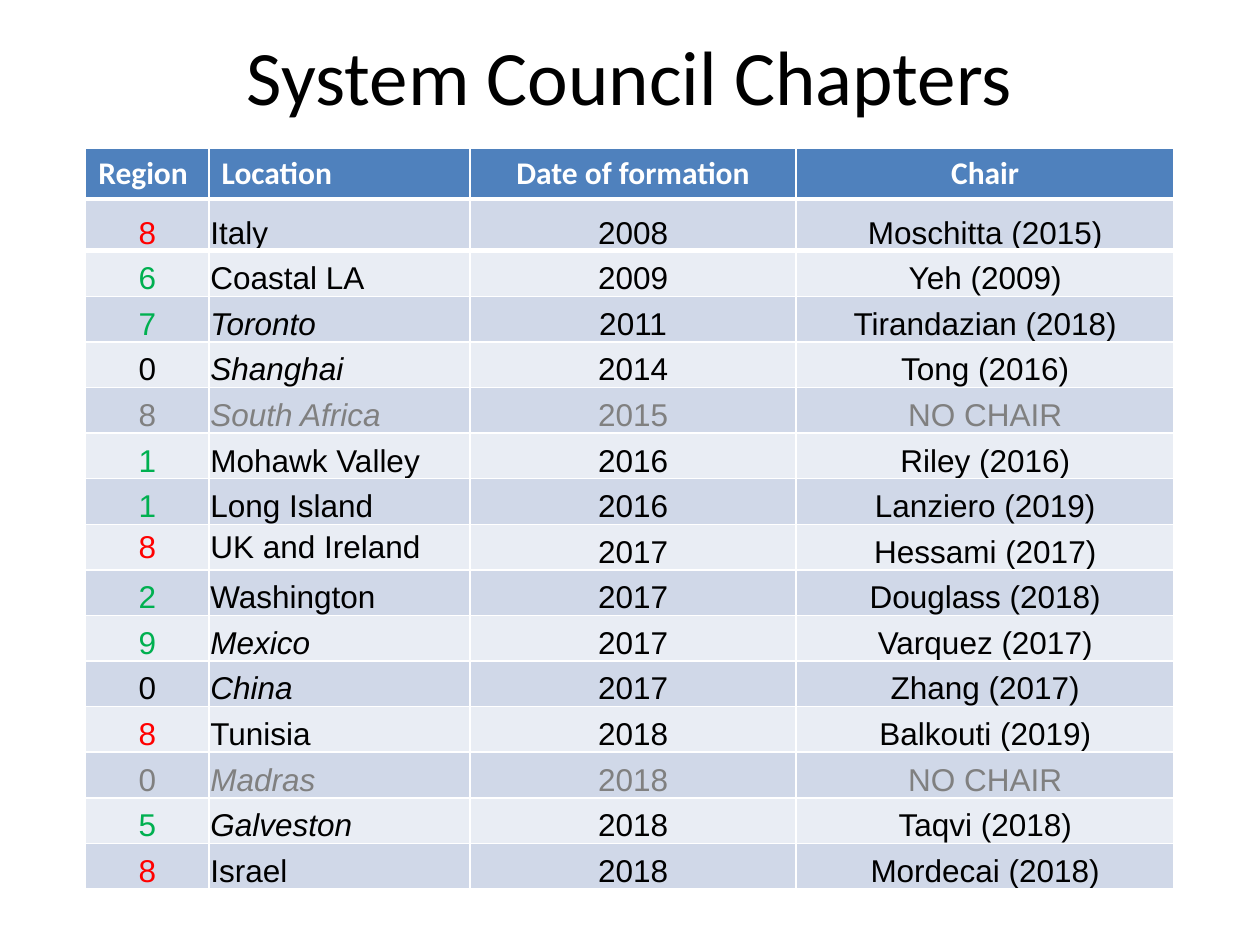
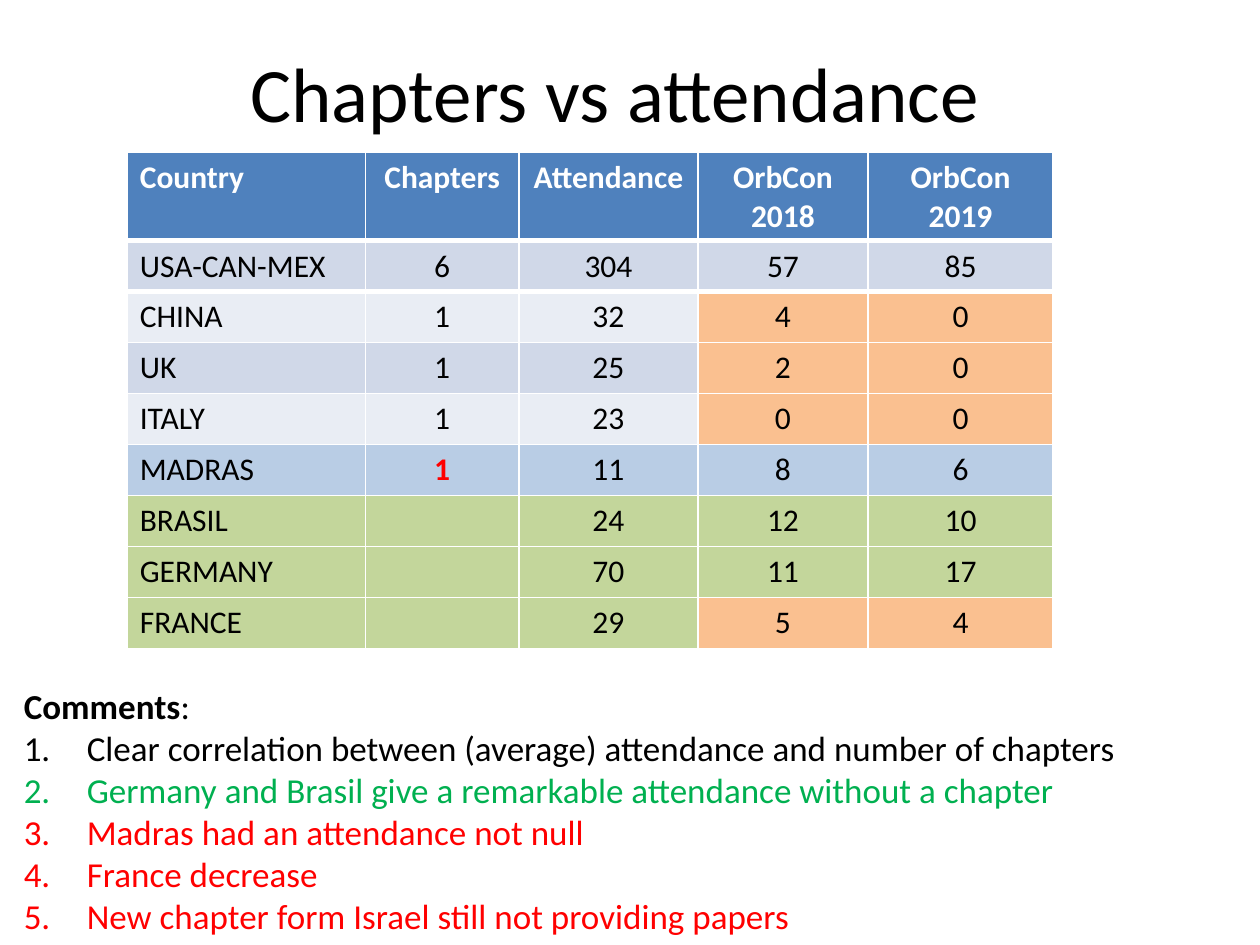
from dataclasses import dataclass
from lxml.etree import SubElement
from pptx import Presentation
from pptx.dml.color import RGBColor
from pptx.enum.text import MSO_ANCHOR, PP_ALIGN
from pptx.oxml.ns import qn
from pptx.util import Inches, Pt


@dataclass(frozen=True)
class Theme:
    """Colours, fonts and type sizes shared by the slides."""
    black: str = "000000"
    white: str = "FFFFFF"
    red: str = "FF0000"
    green: str = "00B050"
    grey: str = "808080"
    head: str = "4F81BD"
    bands: tuple = ("D0D8E8", "E9EDF4")
    blue: str = "B9CDE5"
    lime: str = "C3D69B"
    peach: str = "FAC090"
    main: str = "Calibri"
    data: str = "Arial"
    title: int = 44
    note: int = 20
    cell: int = 18
    rule: int = 3


THEME = Theme()

CHAPTERS = [
    ("8", "Italy", "2008", "Moschitta (2015)"),
    ("6", "Coastal LA", "2009", "Yeh (2009)"),
    ("7", "Toronto", "2011", "Tirandazian (2018)"),
    ("0", "Shanghai", "2014", "Tong (2016)"),
    ("8", "South Africa", "2015", "NO CHAIR"),
    ("1", "Mohawk Valley", "2016", "Riley (2016)"),
    ("1", "Long Island", "2016", "Lanziero (2019)"),
    ("8", "UK and Ireland", "2017", "Hessami (2017)"),
    ("2", "Washington", "2017", "Douglass (2018)"),
    ("9", "Mexico", "2017", "Varquez (2017)"),
    ("0", "China", "2017", "Zhang (2017)"),
    ("8", "Tunisia", "2018", "Balkouti (2019)"),
    ("0", "Madras", "2018", "NO CHAIR"),
    ("5", "Galveston", "2018", "Taqvi (2018)"),
    ("8", "Israel", "2018", "Mordecai (2018)"),
]
ITALIC = {"Toronto", "Shanghai", "South Africa", "Mexico", "China", "Madras", "Galveston"}

TURNOUT = [
    ("USA-CAN-MEX", "6", "304", "57", "85"),
    ("CHINA", "1", "32", "4", "0"),
    ("UK", "1", "25", "2", "0"),
    ("ITALY", "1", "23", "0", "0"),
    ("MADRAS", "1", "11", "8", "6"),
    ("BRASIL", "", "24", "12", "10"),
    ("GERMANY", "", "70", "11", "17"),
    ("FRANCE", "", "29", "5", "4"),
]
TINTS = {"MADRAS": THEME.blue, "BRASIL": THEME.lime, "GERMANY": THEME.lime, "FRANCE": THEME.lime}
WEAK = {"CHINA", "UK", "ITALY", "FRANCE"}

COMMENTS = [
    ("Clear correlation between (average) attendance and number of chapters", THEME.black),
    ("Germany and Brasil give a remarkable attendance without a chapter", THEME.green),
    ("Madras had an attendance not null", THEME.red),
    ("France decrease", THEME.red),
    ("New chapter form Israel still not providing papers", THEME.red),
]


def style(font, size, color=THEME.black, face=THEME.main, bold=False, italic=False):
    """Set every trait of a font."""
    font.size, font.name = Pt(size), face
    font.bold, font.italic = bold, italic
    font.color.rgb = RGBColor.from_string(color)


def add_text(slide, box):
    """Add a wrapping text box and return its frame."""
    frame = slide.shapes.add_textbox(*map(Inches, box)).text_frame
    frame.word_wrap = True
    return frame


def add_title(slide, box, text):
    """Add a centred slide title."""
    frame = add_text(slide, box)
    frame.vertical_anchor = MSO_ANCHOR.MIDDLE
    para = frame.paragraphs[0]
    para.text, para.alignment = text, PP_ALIGN.CENTER
    style(para.font, THEME.title)


def fill_cell(cell, text, fill, center=True, **look):
    """Write one table cell on a solid fill."""
    cell.fill.solid()
    cell.fill.fore_color.rgb = RGBColor.from_string(fill)
    cell.text = text
    for para in cell.text_frame.paragraphs:
        para.alignment = PP_ALIGN.CENTER if center else PP_ALIGN.LEFT
        style(para.font, THEME.cell, **look)


def add_rule(cell, side):
    """Draw a heavy white border on one side of a cell."""
    props = cell._tc.get_or_add_tcPr()
    line = props.makeelement(qn(f"a:{side}"), {"w": str(Pt(THEME.rule))})
    SubElement(SubElement(line, qn("a:solidFill")), qn("a:srgbClr"), val=THEME.white)
    props.insert(0, line)


def add_grid(slide, spot, widths, heights, heads, left):
    """Add a table with its header row; columns in left align left."""
    box = (*spot, sum(widths), sum(heights))
    grid = slide.shapes.add_table(len(heights), len(widths), *map(Inches, box)).table
    for col, width in zip(grid.columns, widths):
        col.width = Inches(width)
    for row, height in zip(grid.rows, heights):
        row.height = Inches(height)
    for col, text in enumerate(heads):
        fill_cell(grid.cell(0, col), text, THEME.head, col not in left,
                  color=THEME.white, bold=True)
        add_rule(grid.cell(0, col), "lnB")
        add_rule(grid.cell(1, col), "lnT")
    return grid


def add_roster(slide, spot):
    """Add the table of chapters."""
    hues = {"8": THEME.red, "0": THEME.black}
    rest = len(CHAPTERS) - 1
    heights = [0.39, 0.41] + [5.07 / rest] * rest
    heads = ("Region", "Location", "Date of formation", "Chair")
    grid = add_grid(slide, spot, (0.98, 2.07, 2.59, 3), heights, heads, (0, 1))
    for row, entry in enumerate(CHAPTERS, 1):
        region, place, _, chair = entry
        ink = THEME.grey if chair == "NO CHAIR" else THEME.black
        for col, text in enumerate(entry):
            cell = grid.cell(row, col)
            hue = hues.get(region, THEME.green) if col == 0 and ink == THEME.black else ink
            fill_cell(cell, text, THEME.bands[(row - 1) % 2], col != 1, color=hue,
                      face=THEME.data, italic=col == 1 and place in ITALIC)
            cell.margin_left = cell.margin_right = cell.margin_top = Inches(0.01)
            cell.margin_bottom = 0
            raised = place == "UK and Ireland" and col < 2
            cell.vertical_anchor = MSO_ANCHOR.MIDDLE if raised else MSO_ANCHOR.BOTTOM


def add_turnout(slide, spot):
    """Add the table of attendance by country."""
    heights = [0.7] + [3.24 / len(TURNOUT)] * len(TURNOUT)
    heads = ("Country", "Chapters", "Attendance", "OrbCon 2018", "OrbCon\n2019")
    grid = add_grid(slide, spot, (1.89, 1.22, 1.42, 1.35, 1.47), heights, heads, (0,))
    for row, entry in enumerate(TURNOUT, 1):
        land = entry[0]
        tint = TINTS.get(land, THEME.bands[(row - 1) % 2])
        for col, text in enumerate(entry):
            fill = THEME.peach if land in WEAK and col > 2 else tint
            alert = land == "MADRAS" and col == 1
            fill_cell(grid.cell(row, col), text, fill, col > 0, bold=alert,
                      color=THEME.red if alert else THEME.black)


def add_notes(slide, box):
    """Add the comments heading and its numbered list."""
    frame = add_text(slide, box)
    for text, bold in (("Comments", True), (":", False)):
        run = frame.paragraphs[0].add_run()
        run.text = text
        style(run.font, THEME.note, bold=bold)
    for text, color in COMMENTS:
        para = frame.add_paragraph()
        para.text = text
        props = para._p.get_or_add_pPr()
        props.set("marL", str(Inches(0.5)))
        props.set("indent", str(-Inches(0.5)))
        SubElement(props, qn("a:buFont"), typeface="+mj-lt")
        SubElement(props, qn("a:buAutoNum"), type="arabicPeriod")
        style(para.font, THEME.note, color)


def main():
    """Build and save the slides."""
    deck = Presentation()
    deck.slide_width, deck.slide_height = Inches(10), Inches(7.5)
    blank = deck.slide_layouts[6]
    slide = deck.slides.add_slide(blank)
    add_title(slide, (0.5, 0.17, 9, 0.85), "System Council Chapters")
    add_roster(slide, (0.68, 1.18))
    slide = deck.slides.add_slide(blank)
    add_title(slide, (0.38, 0.1, 9, 1.25), "Chapters vs attendance")
    add_turnout(slide, (1.01, 1.21))
    add_notes(slide, (0.09, 5.38, 9.71, 2.12))
    deck.save("out.pptx")


if __name__ == "__main__":
    main()
